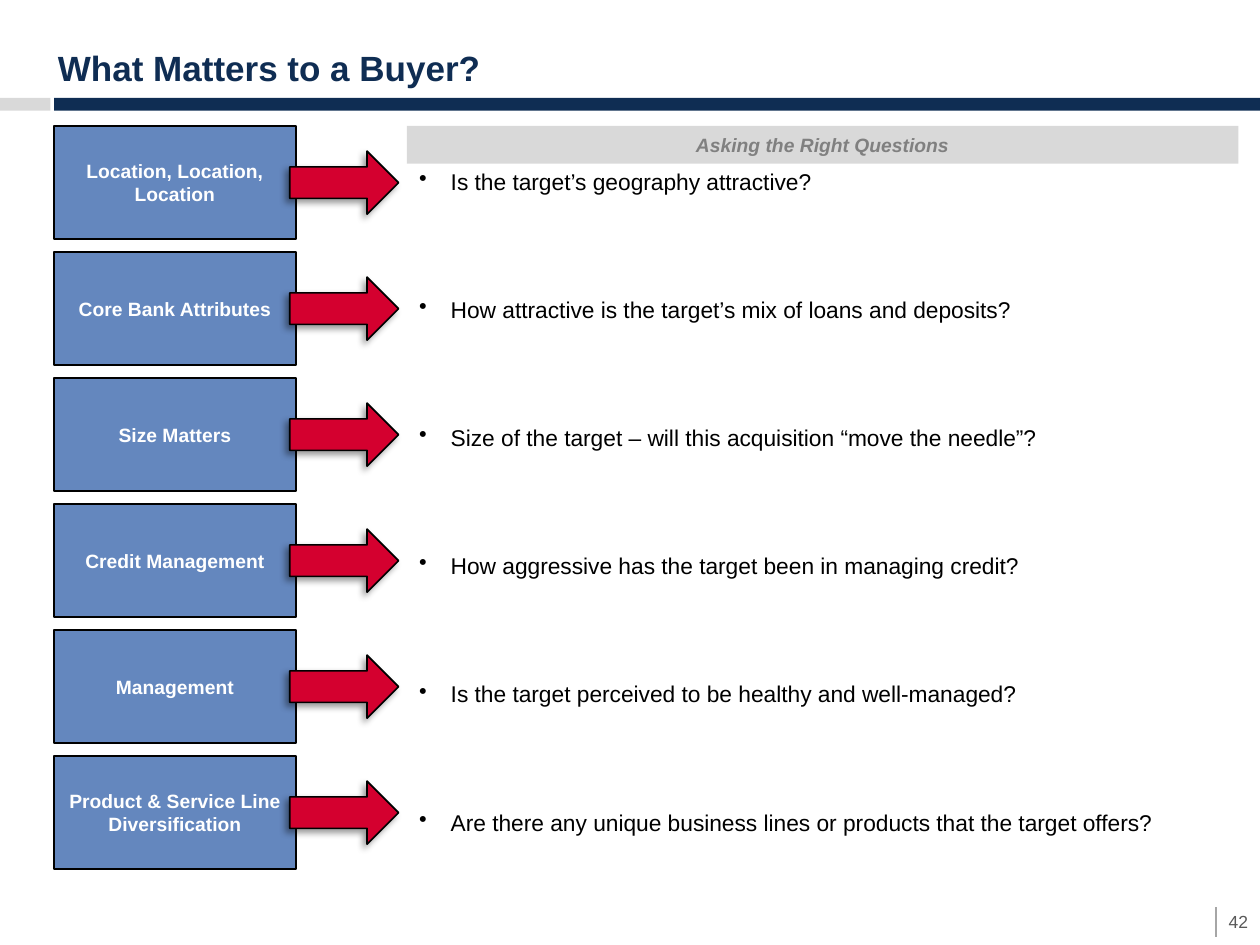
from lxml import etree
from pptx import Presentation
from pptx.dml.color import RGBColor
from pptx.enum.shapes import MSO_CONNECTOR, MSO_SHAPE
from pptx.enum.text import MSO_ANCHOR, PP_ALIGN
from pptx.oxml import parse_xml
from pptx.oxml.ns import nsdecls, qn
from pptx.util import Pt

RECTANGLE, RIGHT_ARROW = MSO_SHAPE.RECTANGLE, MSO_SHAPE.RIGHT_ARROW
STRAIGHT = MSO_CONNECTOR.STRAIGHT
TOP, MIDDLE, BOTTOM = MSO_ANCHOR.TOP, MSO_ANCHOR.MIDDLE, MSO_ANCHOR.BOTTOM
LEFT, CENTER = PP_ALIGN.LEFT, PP_ALIGN.CENTER

NAVY = RGBColor(0x0F, 0x2D, 0x53)
BLUE = RGBColor(0x64, 0x87, 0xBE)
RED = RGBColor(0xD4, 0x00, 0x2F)
BLACK = RGBColor(0x00, 0x00, 0x00)
WHITE = RGBColor(0xFF, 0xFF, 0xFF)
PALE_GRAY = RGBColor(0xD9, 0xD9, 0xD9)
RULE_GRAY = RGBColor(0xA6, 0xA6, 0xA6)
HEADER_GRAY = RGBColor(0x80, 0x80, 0x80)
NUMBER_GRAY = RGBColor(0x59, 0x59, 0x59)

FIRST_ROW, ROW_PITCH = 72, 72
QUESTIONS_LEFT, QUESTIONS_WIDTH = 232.5, 475.2
SHADOW = (
    f'<a:effectLst {nsdecls("a")}><a:outerShdw blurRad="50800" dist="38100" '
    'dir="8100000" algn="tr" rotWithShape="0"><a:srgbClr val="000000">'
    '<a:alpha val="40000"/></a:srgbClr></a:outerShdw></a:effectLst>'
)

TOPICS = [
    ("Location, Location, Location", "Is the target’s geography attractive?"),
    ("Core Bank Attributes", "How attractive is the target’s mix of loans and deposits?"),
    ("Size Matters", "Size of the target – will this acquisition “move the needle”?"),
    ("Credit Management", "How aggressive has the target been in managing credit?"),
    ("Management", "Is the target perceived to be healthy and well-managed?"),
    ("Product & Service Line Diversification",
     "Are there any unique business lines or products that the target offers?"),
]


def add_block(kind, left, top, width, height, fill, outlined=False):
    block = page.shapes.add_shape(kind, Pt(left), Pt(top), Pt(width), Pt(height))
    block.shadow.inherit = False
    block.fill.solid()
    block.fill.fore_color.rgb = fill
    if outlined:
        block.line.color.rgb = BLACK
        block.line.width = Pt(1)
    else:
        block.line.fill.background()
    return block


def write(box, lines, size, color, align=LEFT, anchor=MIDDLE, bold=False):
    """Fill a shape with one paragraph per line and return the paragraphs."""
    frame = box.text_frame
    frame.word_wrap = True
    frame.vertical_anchor = anchor
    frame.text = "\n".join(lines)
    for para in frame.paragraphs:
        para.alignment = align
        para.font.name = "Arial"
        para.font.size = Pt(size)
        para.font.bold = bold
        para.font.color.rgb = color
    return frame.paragraphs


deck = Presentation()
deck.slide_width, deck.slide_height = Pt(720), Pt(540)
page = deck.slides.add_slide(deck.slide_layouts[6])

# Title band and page number rule
add_block(RECTANGLE, 0, 56, 28.8, 7.2, PALE_GRAY)
add_block(RECTANGLE, 31, 56, 689, 7.2, NAVY)
number_rule = page.shapes.add_connector(STRAIGHT, Pt(694.8), Pt(518.4), Pt(694.8), Pt(535.7))
number_rule.line.color.rgb = RULE_GRAY
number_rule.line.width = Pt(1.25)
etree.SubElement(number_rule._element.spPr, qn("a:effectLst"))

# Questions
questions = page.shapes.add_textbox(Pt(QUESTIONS_LEFT), Pt(92.2), Pt(QUESTIONS_WIDTH), Pt(32.4))
paras = write(questions, [question for _, question in TOPICS], 13, BLACK, anchor=TOP)
for index, para in enumerate(paras):
    para.space_before = Pt(57.6 if index else 0)
    properties = para._p.get_or_add_pPr()
    properties.set("marL", str(Pt(18)))
    properties.set("indent", str(-Pt(18)))
    bullet = parse_xml(f'<a:buChar {nsdecls("a")} char="•"/>')
    properties.find(qn("a:defRPr")).addprevious(bullet)

# Title and page number
title = page.shapes.add_textbox(Pt(26), Pt(18), Pt(648), Pt(36))
write(title, ["What Matters to a Buyer?"], 20, NAVY, anchor=BOTTOM, bold=True)
number = page.shapes.add_textbox(Pt(691.2), Pt(512), Pt(33), Pt(28.8))
write(number, ["42"], 10, NUMBER_GRAY, CENTER)

# Topic boxes with their arrows on top
for row, (topic, _) in enumerate(TOPICS):
    top = FIRST_ROW + row * ROW_PITCH
    topic_box = add_block(RECTANGLE, 31, top, 138, 64.8, BLUE, outlined=True)
    write(topic_box, [topic], 11, WHITE, CENTER, bold=True)
    arrow = add_block(RIGHT_ARROW, 165.6, top + 14.4, 62.2, 36, RED, outlined=True)
    effects = arrow._element.spPr.find(qn("a:effectLst"))
    effects.getparent().replace(effects, parse_xml(SHADOW))

# Column header
header = add_block(RECTANGLE, QUESTIONS_LEFT, FIRST_ROW, QUESTIONS_WIDTH, 21.6, PALE_GRAY)
header_para = write(header, ["Asking the Right Questions"], 11, HEADER_GRAY, CENTER, bold=True)[0]
header_para.font.italic = True

deck.save("out.pptx")
